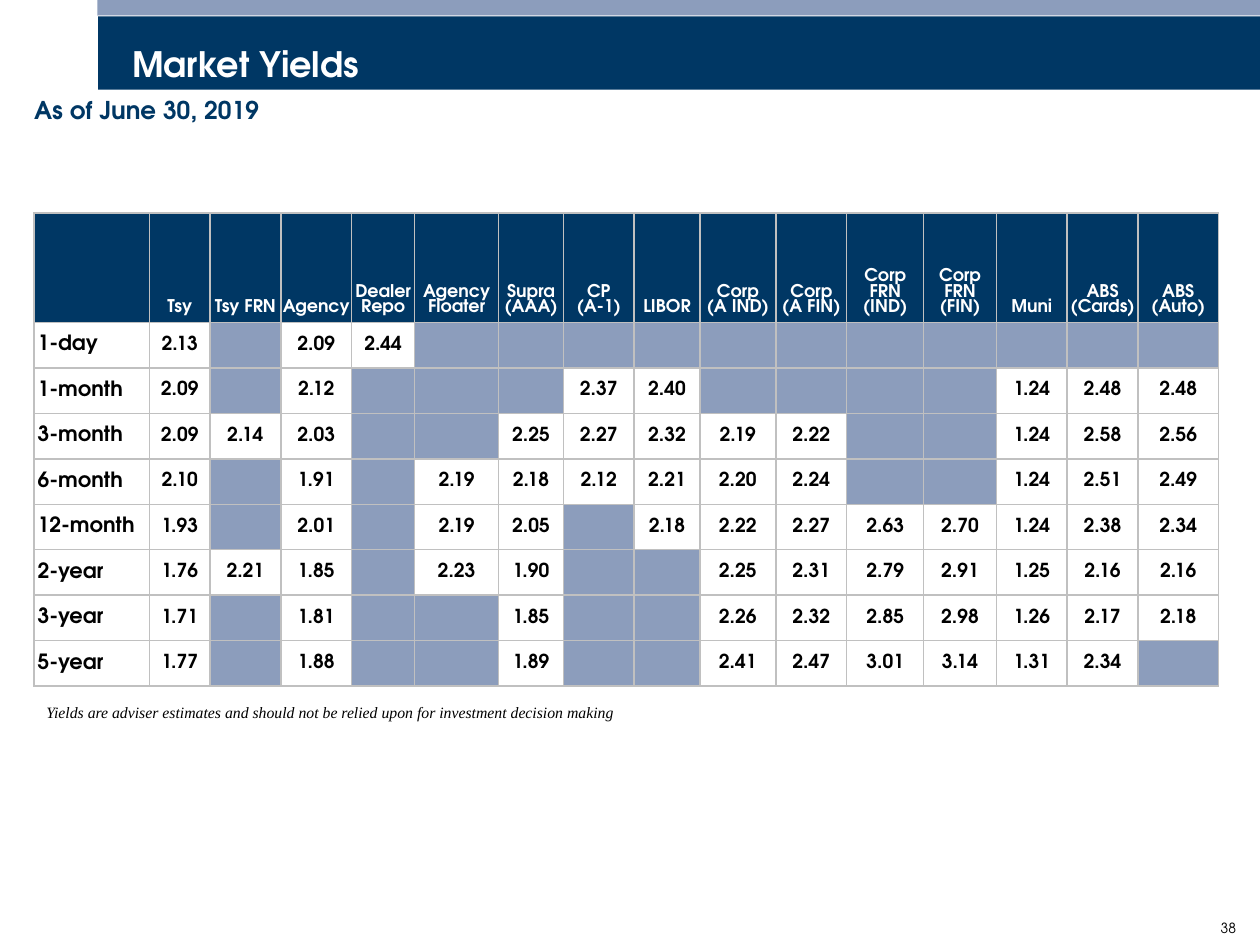
import pptx
import pptx.util
import pptx.dml.color
import pptx.enum.shapes
import pptx.enum.text
import pptx.oxml

Pt = pptx.util.Pt
RGB = pptx.dml.color.RGBColor
ALIGN = pptx.enum.text.PP_ALIGN
ANCHOR = pptx.enum.text.MSO_ANCHOR

NAVY = RGB(0x00, 0x37, 0x64)
SLATE = RGB(0x8C, 0x9D, 0xBC)
PALE = RGB(0xBA, 0xC4, 0xD7)
WHITE = RGB(0xFF, 0xFF, 0xFF)
BLACK = RGB(0x00, 0x00, 0x00)
GRID = RGB(0xC0, 0xC0, 0xC0)

SANS = "TeX Gyre Adventor"
SERIF = "Times New Roman"

COL_WIDTHS = [66, 34.5, 40.5, 40.5, 36, 48, 37, 40.5,
              37.5, 43.5, 40.5, 44, 41.5, 40.5, 40.5, 46]
HEADER_HEIGHT = 62.5

# Each header is a list of paragraphs; "\n" is a line break inside one.
HEADERS = [
    [], ["Tsy"], ["Tsy FRN"], ["Agency"], ["Dealer Repo"],
    ["Agency", "Floater"], ["Supra (AAA)"], ["CP\n(A-1)"], ["LIBOR"],
    ["Corp", "(A IND)"], ["Corp", "(A FIN)"], ["Corp", "FRN (IND)"],
    ["Corp FRN (FIN)"], ["Muni"], ["ABS (Cards)"], ["ABS (Auto)"],
]

# A dash marks a maturity that is not quoted.
YIELDS = """
1-day    2.13 -    2.09 2.44 -    -    -    -    -    -    -    -    -    -    -
1-month  2.09 -    2.12 -    -    -    2.37 2.40 -    -    -    -    1.24 2.48 2.48
3-month  2.09 2.14 2.03 -    -    2.25 2.27 2.32 2.19 2.22 -    -    1.24 2.58 2.56
6-month  2.10 -    1.91 -    2.19 2.18 2.12 2.21 2.20 2.24 -    -    1.24 2.51 2.49
12-month 1.93 -    2.01 -    2.19 2.05 -    2.18 2.22 2.27 2.63 2.70 1.24 2.38 2.34
2-year   1.76 2.21 1.85 -    2.23 1.90 -    -    2.25 2.31 2.79 2.91 1.25 2.16 2.16
3-year   1.71 -    1.81 -    -    1.85 -    -    2.26 2.32 2.85 2.98 1.26 2.17 2.18
5-year   1.77 -    1.88 -    -    1.89 -    -    2.41 2.47 3.01 3.14 1.31 2.34 -
""".strip().splitlines()


def add_run(p, text, size, color, bold=False, italic=False, font=SANS):
    r = p.add_run()
    r.text = text
    f = r.font
    f.name, f.size, f.bold, f.italic = font, Pt(size), bold, italic
    f.color.rgb = color


def set_insets(target, left, top, right, bottom):
    """Set the margins of a text frame or a table cell."""
    target.margin_left, target.margin_top = Pt(left), Pt(top)
    target.margin_right, target.margin_bottom = Pt(right), Pt(bottom)


def add_band(s, color, x, y, w, h):
    sp = s.shapes.add_shape(pptx.enum.shapes.MSO_SHAPE.RECTANGLE,
                            Pt(x), Pt(y), Pt(w), Pt(h))
    sp.shadow.inherit = False
    sp.fill.solid()
    sp.fill.fore_color.rgb = color
    sp.line.fill.background()


def place_title(s, x, y, w, h):
    sp = s.shapes.title
    sp.left, sp.top, sp.width, sp.height = Pt(x), Pt(y), Pt(w), Pt(h)
    sp.fill.solid()
    sp.fill.fore_color.rgb = NAVY
    tf = sp.text_frame
    tf.word_wrap = True
    tf.auto_size = pptx.enum.text.MSO_AUTO_SIZE.NONE
    tf.vertical_anchor = ANCHOR.BOTTOM
    set_insets(tf, 6.5, 3, 3, 3)
    p = tf.paragraphs[0]
    p.alignment = ALIGN.LEFT
    p.line_spacing = 1.0
    pPr = p._p.get_or_add_pPr()
    pPr.set("marL", str(Pt(13)))
    pPr.set("indent", "0")
    add_run(p, "Market Yields", 20, WHITE, bold=True)


def add_text(s, text, x, y, w, h, size, color, anchor=ANCHOR.MIDDLE,
             align=ALIGN.LEFT, left_inset=7.2, **style):
    tf = s.shapes.add_textbox(Pt(x), Pt(y), Pt(w), Pt(h)).text_frame
    tf.word_wrap = True
    tf.vertical_anchor = anchor
    set_insets(tf, left_inset, 3.6, 7.2, 3.6)
    p = tf.paragraphs[0]
    p.alignment = align
    add_run(p, text, size, color, **style)


def format_cell(cell, fill, anchor):
    """Fill the cell, anchor its text and draw its four borders."""
    tcPr = cell._tc.get_or_add_tcPr()
    for side in ("lnL", "lnR", "lnT", "lnB"):
        tcPr.append(pptx.oxml.parse_xml(
            f'<a:{side} xmlns:a="http://schemas.openxmlformats.org/drawingml/2006/main"'
            f' w="{Pt(1)}"><a:solidFill><a:srgbClr val="{GRID}"/></a:solidFill></a:{side}>'))
    cell.fill.solid()
    cell.fill.fore_color.rgb = fill
    cell.vertical_anchor = anchor


def fill_header(cell, paragraphs):
    format_cell(cell, NAVY, ANCHOR.BOTTOM)
    set_insets(cell, 0, 3.6, 0, 3.6)
    tf = cell.text_frame
    for i, text in enumerate(paragraphs):
        p = tf.add_paragraph() if i else tf.paragraphs[0]
        p.alignment = ALIGN.CENTER
        p.line_spacing = Pt(9)
        for j, line in enumerate(text.split("\n")):
            if j:
                p.add_line_break()
            add_run(p, line, 10, WHITE, bold=True)


def fill_body(cell, text, is_label):
    quoted = text != "-"
    format_cell(cell, WHITE if quoted else SLATE, ANCHOR.MIDDLE)
    set_insets(cell, 2, 2, 2, 2)
    p = cell.text_frame.paragraphs[0]
    if quoted:
        p.alignment = ALIGN.LEFT if is_label else ALIGN.CENTER
        add_run(p, text, 12 if is_label else 11, BLACK, bold=True)
    else:
        p.font.size = Pt(11)


def add_yield_table(s, x, y, w, h):
    table = s.shapes.add_table(len(YIELDS) + 1, len(HEADERS),
                               Pt(x), Pt(y), Pt(w), Pt(h)).table
    table.first_row = table.horz_banding = False
    for col, width in zip(table.columns, COL_WIDTHS):
        col.width = Pt(width)
    for row in table.rows:
        row.height = Pt((h - HEADER_HEIGHT) / len(YIELDS))
    table.rows[0].height = Pt(HEADER_HEIGHT)
    for c, paragraphs in enumerate(HEADERS):
        fill_header(table.cell(0, c), paragraphs)
    for r, line in enumerate(YIELDS, 1):
        for c, text in enumerate(line.split()):
            fill_body(table.cell(r, c), text, c == 0)


def main():
    prs = pptx.Presentation()
    prs.slide_width, prs.slide_height = Pt(720), Pt(540)
    s = prs.slides.add_slide(prs.slide_layouts[5])
    add_band(s, PALE, 55.5, 0, 664.5, 9)
    add_band(s, SLATE, 56, 0, 664, 8.5)
    place_title(s, 56, 9.3, 664, 42)
    add_text(s, "As of June 30, 2019", 19.5, 51, 628, 24.5, 14, NAVY,
             anchor=ANCHOR.TOP, left_inset=0, bold=True)
    add_yield_table(s, 19.5, 121.7, sum(COL_WIDTHS), 270.5)
    add_text(s, "Yields are adviser estimates and should not be relied upon "
             "for investment decision making",
             19.5, 393, 374.5, 28, 9, BLACK, italic=True, font=SERIF)
    add_text(s, "38", 681, 520, 32.5, 20, 8, BLACK, align=ALIGN.RIGHT)
    prs.save("out.pptx")


if __name__ == "__main__":
    main()
